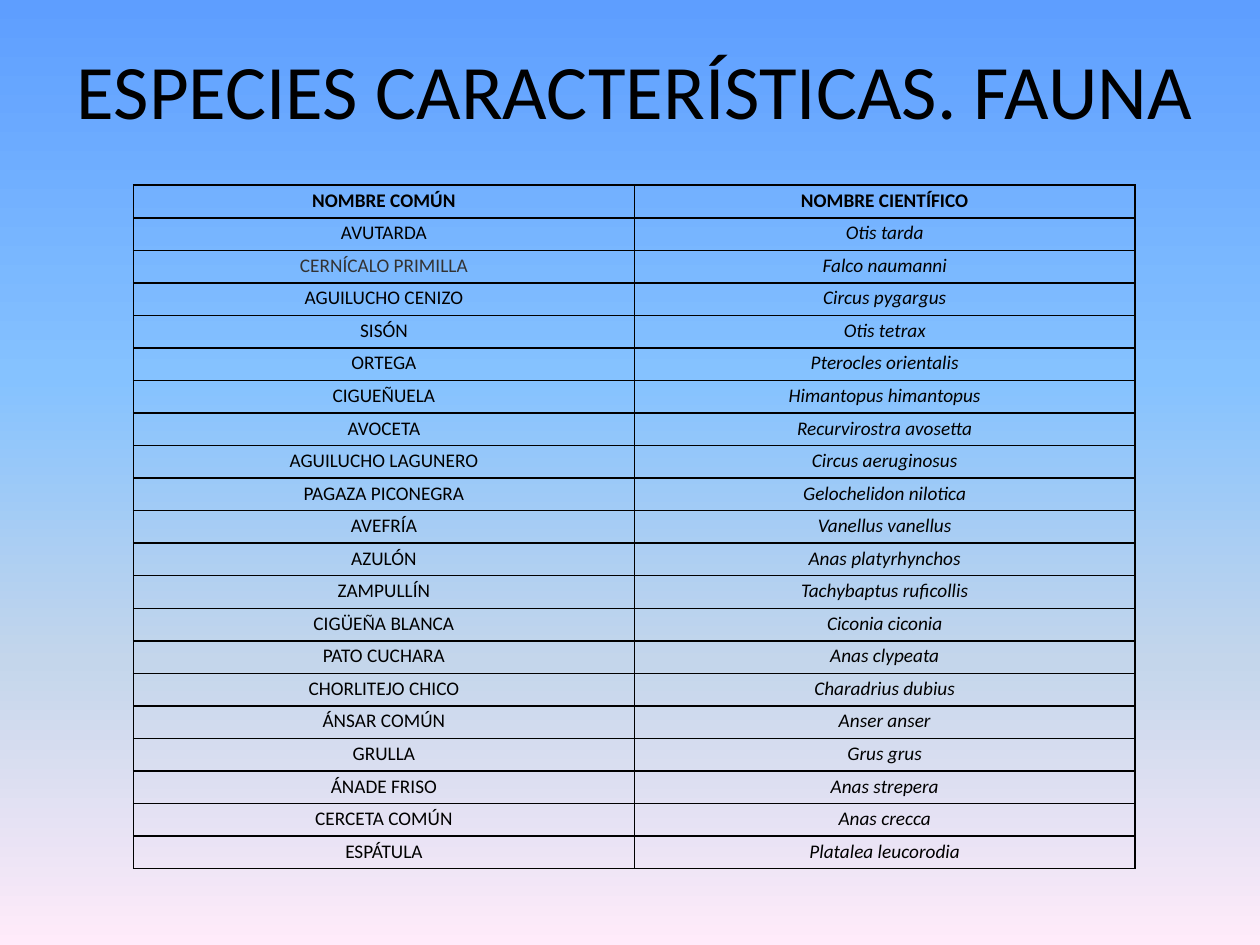
from lxml.etree import SubElement
from pptx import Presentation
from pptx.dml.color import RGBColor
from pptx.enum.text import MSO_ANCHOR, MSO_AUTO_SIZE, PP_ALIGN
from pptx.oxml.ns import qn
from pptx.util import Inches, Pt

FONT = "Calibri"
BLACK = "000000"
GREY = "333333"
BACKGROUND_STOPS = [(0, "5E9EFF"), (40, "85C2FF"), (70, "C4D6EB"), (100, "FFEBFA")]
HEADINGS = ("NOMBRE COMÚN", "NOMBRE CIENTÍFICO")
GREY_NAME = "CERNÍCALO PRIMILLA"
SPECIES = [
    ("AVUTARDA", "Otis tarda"),
    (GREY_NAME, "Falco naumanni"),
    ("AGUILUCHO CENIZO", "Circus pygargus"),
    ("SISÓN", "Otis tetrax"),
    ("ORTEGA", "Pterocles orientalis"),
    ("CIGUEÑUELA", "Himantopus himantopus"),
    ("AVOCETA", "Recurvirostra avosetta"),
    ("AGUILUCHO LAGUNERO", "Circus aeruginosus"),
    ("PAGAZA PICONEGRA", "Gelochelidon nilotica"),
    ("AVEFRÍA", "Vanellus vanellus"),
    ("AZULÓN", "Anas platyrhynchos"),
    ("ZAMPULLÍN", "Tachybaptus ruficollis"),
    ("CIGÜEÑA BLANCA", "Ciconia ciconia"),
    ("PATO CUCHARA", "Anas clypeata"),
    ("CHORLITEJO CHICO", "Charadrius dubius"),
    ("ÁNSAR COMÚN", "Anser anser"),
    ("GRULLA", "Grus grus"),
    ("ÁNADE FRISO", "Anas strepera"),
    ("CERCETA COMÚN", "Anas crecca"),
    ("ESPÁTULA", "Platalea leucorodia"),
]


def color(value):
    """Return the colour for a hex string."""
    return RGBColor.from_string(value)


def add_run(paragraph, text, size, value=BLACK, bold=False, italic=False):
    """Append a formatted run to a paragraph."""
    run = paragraph.add_run()
    run.text = text
    font = run.font
    font.name, font.size = FONT, Pt(size)
    font.bold, font.italic = bold, italic
    font.color.rgb = color(value)


def paint_background(slide):
    """Fill the slide with a vertical gradient."""
    fill = slide.background.fill
    fill.gradient()
    fill.gradient_angle = 270
    stops = next(slide.element.iter(qn("a:gsLst")))
    for stop in list(stops):
        stops.remove(stop)
    for position, value in BACKGROUND_STOPS:
        stop = SubElement(stops, qn("a:gs"), pos=str(position * 1000))
        SubElement(stop, qn("a:srgbClr"), val=value)


def place_title(slide, left, top, width, height):
    """Put the heading in the title placeholder."""
    title = slide.shapes.title
    title.left, title.top, title.width, title.height = left, top, width, height
    frame = title.text_frame
    frame.word_wrap = False
    frame.auto_size = MSO_AUTO_SIZE.SHAPE_TO_FIT_TEXT
    frame.vertical_anchor = MSO_ANCHOR.TOP
    paragraph = frame.paragraphs[0]
    paragraph.alignment = PP_ALIGN.LEFT
    add_run(paragraph, "ESPECIES CARACTERÍSTICAS. FAUNA", 44)


def draw_borders(cell):
    """Give all four sides of a cell a thin black line."""
    properties = cell._tc.get_or_add_tcPr()
    for index, side in enumerate(("a:lnL", "a:lnR", "a:lnT", "a:lnB")):
        line = SubElement(properties, qn(side), w=str(Pt(1)))
        fill = SubElement(line, qn("a:solidFill"))
        SubElement(fill, qn("a:srgbClr"), val=BLACK)
        properties.insert(index, line)


def fill_cell(cell, text, **style):
    """Write centred text in a transparent, bordered cell."""
    cell.fill.background()
    cell.margin_left = cell.margin_right = Inches(0.07)
    cell.margin_top = cell.margin_bottom = 0
    paragraph = cell.text_frame.paragraphs[0]
    paragraph.alignment = PP_ALIGN.CENTER
    paragraph.line_spacing = 1.15
    add_run(paragraph, text, 11, **style)
    draw_borders(cell)


def place_species_table(slide, left, top, width, height):
    """Build the table of common and scientific names."""
    shape = slide.shapes.add_table(len(SPECIES) + 1, 2, left, top, width, height)
    table = shape.table
    table.first_row = table.horz_banding = False
    for column, heading in enumerate(HEADINGS):
        fill_cell(table.cell(0, column), heading, bold=True)
    for row, (common, scientific) in enumerate(SPECIES, start=1):
        value = GREY if common == GREY_NAME else BLACK
        fill_cell(table.cell(row, 0), common, value=value)
        fill_cell(table.cell(row, 1), scientific, italic=True)


def main():
    """Build and save the presentation."""
    presentation = Presentation()
    presentation.slide_width, presentation.slide_height = Inches(10), Inches(7.5)
    slide = presentation.slides.add_slide(presentation.slide_layouts[5])
    paint_background(slide)
    place_title(slide, Inches(0.51), Inches(0.29), Inches(9.16), Inches(0.84))
    place_species_table(slide, Inches(1.06), Inches(1.47), Inches(7.95), Inches(5.43))
    presentation.save("out.pptx")


if __name__ == "__main__":
    main()
